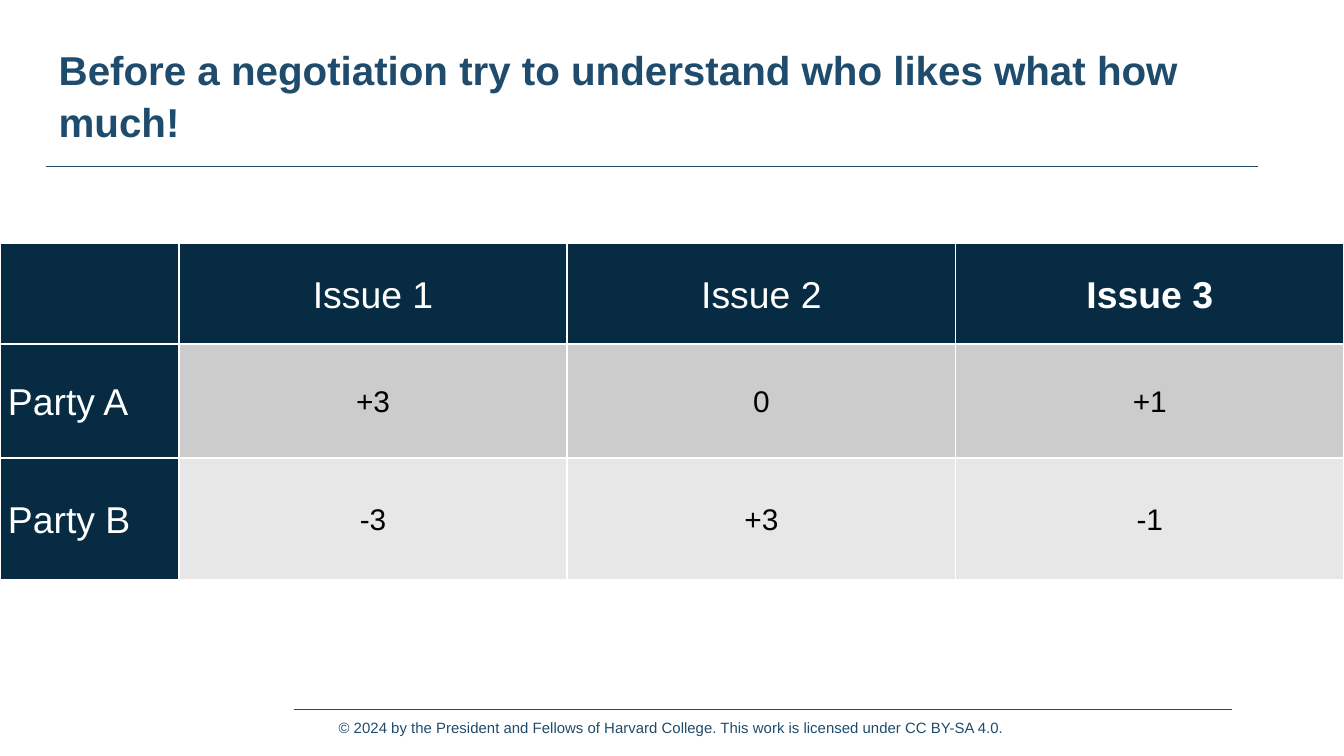
from lxml.etree import SubElement
from pptx import Presentation
from pptx.dml.color import RGBColor
from pptx.enum.shapes import MSO_CONNECTOR
from pptx.enum.text import MSO_ANCHOR, PP_ALIGN
from pptx.oxml.ns import qn
from pptx.util import Cm, Pt

WHITE = RGBColor(0xFF, 0xFF, 0xFF)
BLACK = RGBColor(0, 0, 0)
BLUE = RGBColor(0x1F, 0x4C, 0x6D)
NAVY = RGBColor(0x07, 0x2B, 0x42)
GRAY = RGBColor(0xCC, 0xCC, 0xCC)
LIGHT_GRAY = RGBColor(0xE7, 0xE7, 0xE7)

ROWS = [
    ["", "Issue 1", "Issue 2", "Issue 3"],
    ["Party A", "+3", "0", "+1"],
    ["Party B", "-3", "+3", "-1"],
]
BAND_FILLS = [NAVY, GRAY, LIGHT_GRAY]
COL_WIDTHS = [3.38, 7.34, 7.34, 7.34]
ROW_HEIGHTS = [1.9, 2.16, 2.29]


class SlideBuilder:
    font = "Arial"

    def __init__(self, slide):
        self.s = slide

    def add_text_run(self, p, text, color, **fmt):
        r = p.add_run()
        r.text = text
        r.font.color.rgb = color
        for name, value in {"name": self.font, "bold": False, **fmt}.items():
            setattr(r.font, name, value)

    def rule(self, x1, x2, y):
        sp = self.s.shapes.add_connector(
            MSO_CONNECTOR.STRAIGHT, Cm(x1), Cm(y), Cm(x2), Cm(y))
        sp.line.color.rgb = BLUE
        sp.line.width = Pt(0.75)
        SubElement(sp._element.spPr, qn("a:effectLst"))

    def text(self, box, text, inset=0.13, spacing=1.0, **fmt):
        tf = self.s.shapes.add_textbox(*map(Cm, box)).text_frame
        tf.word_wrap = True
        tf.margin_top = tf.margin_bottom = Cm(inset)
        p = tf.paragraphs[0]
        p.line_spacing = spacing
        self.add_text_run(p, text, BLUE, **fmt)

    def border(self, cell):
        """Draw a thin white line on all four sides of a cell."""
        tc_pr = cell._tc.get_or_add_tcPr()
        for side in ("lnL", "lnR", "lnT", "lnB"):
            ln = SubElement(tc_pr, qn(f"a:{side}"), w=str(int(Pt(1))))
            fill = SubElement(ln, qn("a:solidFill"))
            SubElement(fill, qn("a:srgbClr"), val=str(WHITE))

    def cell(self, cell, text, fill, color, align, **fmt):
        self.border(cell)
        cell.fill.solid()
        cell.fill.fore_color.rgb = fill
        layout = {
            "vertical_anchor": MSO_ANCHOR.MIDDLE,
            "margin_left": Cm(0.15), "margin_right": Cm(0.15),
            "margin_top": 0, "margin_bottom": 0,
        }
        for name, value in layout.items():
            setattr(cell, name, value)
        if text:
            p = cell.text_frame.paragraphs[0]
            p.alignment = align
            p.line_spacing = 1.07
            self.add_text_run(p, text, color, **fmt)

    def table(self, left, top):
        table = self.s.shapes.add_table(
            len(ROWS), len(COL_WIDTHS), Cm(left), Cm(top),
            Cm(sum(COL_WIDTHS)), Cm(sum(ROW_HEIGHTS))).table
        for col, width in zip(table.columns, COL_WIDTHS):
            col.width = Cm(width)
        for i, (row, height) in enumerate(zip(table.rows, ROW_HEIGHTS)):
            row.height = Cm(height)
            for j, text in enumerate(ROWS[i]):
                heading = i == 0 or j == 0
                self.cell(
                    table.cell(i, j), text,
                    fill=NAVY if heading else BAND_FILLS[i],
                    color=WHITE if heading else BLACK,
                    align=PP_ALIGN.LEFT if j == 0 else PP_ALIGN.CENTER,
                    size=Pt(20 if heading else 16),
                    bold=text == "Issue 3")


def main():
    prs = Presentation()
    prs.slide_width, prs.slide_height = Cm(25.4), Cm(14.29)
    b = SlideBuilder(prs.slides.add_slide(prs.slide_layouts[6]))
    b.rule(5.56, 23.29, 13.41)
    b.text((6.15, 13.46, 17.15, 0.61),
           "© 2024 by the President and Fellows of Harvard College. "
           "This work is licensed under CC BY-SA 4.0.", size=Pt(8))
    b.rule(0.86, 23.77, 3.15)
    b.text((0.86, 0.56, 23.67, 2.26),
           "Before a negotiation try to understand who likes what how much!",
           inset=0.25, spacing=1.06, size=Pt(21.6), bold=True)
    b.table(0, 4.6)
    prs.save("out.pptx")


if __name__ == "__main__":
    main()
